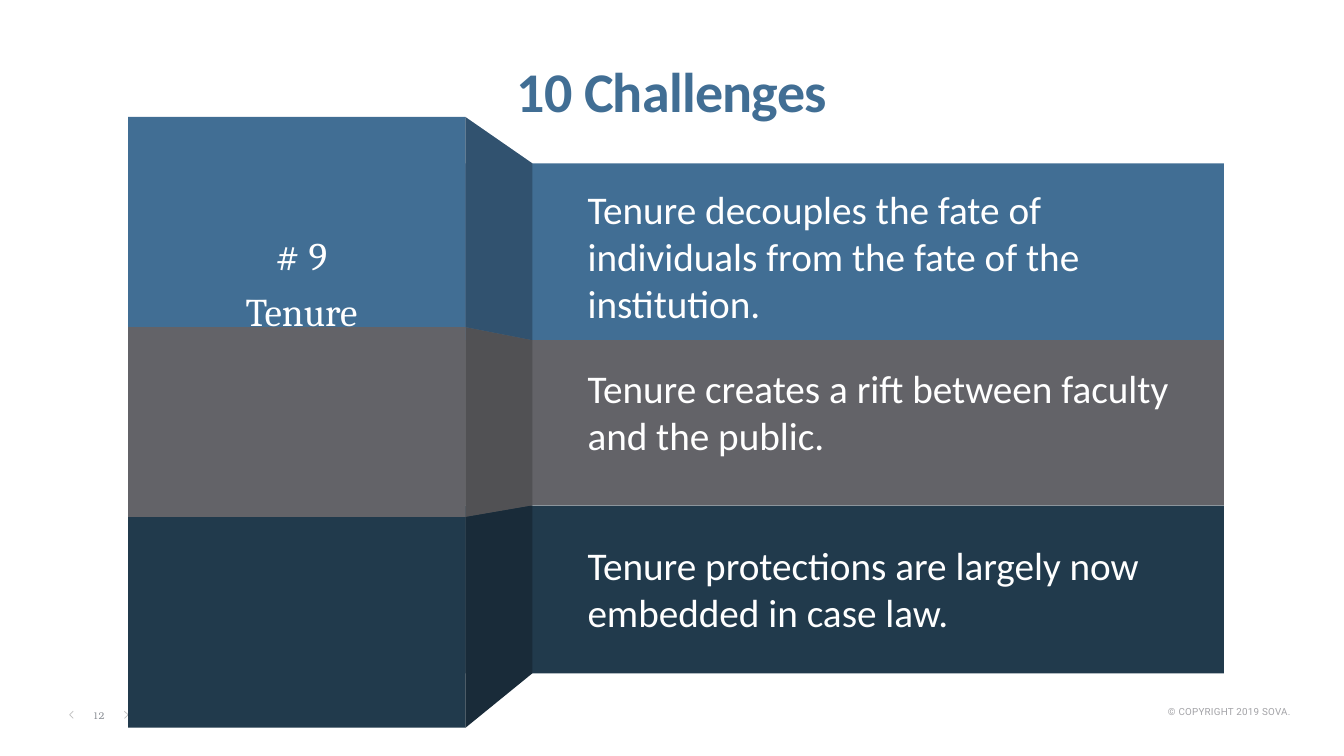
from collections import namedtuple

from pptx import Presentation
from pptx.dml.color import RGBColor
from pptx.enum.shapes import MSO_SHAPE
from pptx.enum.text import MSO_ANCHOR, PP_ALIGN
from pptx.util import Inches, Pt

COLORS = {
    "blue": "416E94", "blue_fold": "31526F",
    "gray": "636368", "gray_fold": "515154",
    "navy": "213A4C", "navy_fold": "192B39",
    "white": "FFFFFF", "copyright": "A3A3A7",
    "page": "8D9197", "chevron": "BFBFBF",
}
WIDTH, HEIGHT = Inches(13.33), Inches(7.5)
COLUMN, ROW = WIDTH / 100, HEIGHT / 100

Box = namedtuple("Box", "left top width height")
Band = namedtuple("Band", "color text text_top text_height")

BANDS = [
    Band("blue", "Tenure decouples the fate of individuals from the fate of the institution.", 8.4, 20.13),
    Band("gray", "Tenure creates a rift between faculty and the public.", 32, 13.87),
    Band("navy", "Tenure protections are largely now embedded in case law.", 55.47, 13.87),
]
OUTER_EDGES = [0, 27.8, 52.93, 80.8]
INNER_EDGES = [6.13, 29.53, 51.4, 73.6]
FOLD_START, FOLD_END = 25.1, 30.08


def color(name):
    return RGBColor.from_string(COLORS[name])


def to_emu(box):
    return (round(box.left * COLUMN), round(box.top * ROW),
            round(box.width * COLUMN), round(box.height * ROW))


def within(box, left, top, width, height):
    return Box(box.left + left, box.top + top, width, height)


def add_text(slide, box, lines, font, size, color_name, align=PP_ALIGN.LEFT,
             anchor=MSO_ANCHOR.MIDDLE, margins=(0.1, 0.05), wrap=True,
             bold=False, line_spacing=None, space_after=None, tracking=None):
    frame = slide.shapes.add_textbox(*to_emu(box)).text_frame
    frame.word_wrap = wrap
    frame.vertical_anchor = anchor
    frame.margin_left = frame.margin_right = Inches(margins[0])
    frame.margin_top = frame.margin_bottom = Inches(margins[1])
    frame.text = "\n".join(lines)
    for paragraph in frame.paragraphs:
        paragraph.alignment = align
        paragraph.line_spacing = line_spacing
        paragraph.space_after = space_after
        for run in paragraph.runs:
            run.font.name = font
            run.font.size = Pt(size)
            run.font.bold = bold
            run.font.color.rgb = color(color_name)
            if tracking is not None:
                run.font._element.set("spc", str(tracking))


def add_rectangle(slide, box, color_name):
    shape = slide.shapes.add_shape(MSO_SHAPE.RECTANGLE, *to_emu(box))
    shape.shadow.inherit = False
    shape.fill.solid()
    shape.fill.fore_color.rgb = color(color_name)
    shape.line.fill.background()


def add_outline(slide, box, points, closed):
    corners = [(round((box.left + x) * COLUMN), round((box.top + y) * ROW))
               for x, y in points]
    builder = slide.shapes.build_freeform(*corners[0])
    builder.add_line_segments(corners[1:], close=closed)
    shape = builder.convert_to_shape()
    shape.shadow.inherit = False
    return shape


def add_footer(slide, box):
    add_text(slide, within(box, 79, 0, 18, 3.33), ["© COPYRIGHT 2019 SOVA."],
             "Roboto", 7, "copyright", PP_ALIGN.RIGHT, margins=(0.13, 0.07), tracking=20)
    add_text(slide, within(box, 5.35, 0.54, 4, 3.2), ["12"],
             "TeX Gyre Bonum", 7, "page", PP_ALIGN.CENTER, margins=(0.13, 0.07))
    for tip, arm in ((9.53, 9.26), (5.18, 5.45)):
        chevron = add_outline(slide, box, [(arm, 1.55), (tip, 2.02), (arm, 2.49)], False)
        chevron.fill.background()
        chevron.line.color.rgb = color("chevron")
        chevron.line.width = Pt(0.5)


def add_title(slide, box):
    add_text(slide, box, ["10 Challenges"], "Calibri", 40, "blue", PP_ALIGN.CENTER,
             margins=(0, 0), bold=True, line_spacing=0.86, tracking=-50)


def add_ribbon(slide, box):
    for index, band in enumerate(BANDS):
        outer_top, outer_bottom = OUTER_EDGES[index:index + 2]
        inner_top, inner_bottom = INNER_EDGES[index:index + 2]
        add_rectangle(slide, within(box, 0, outer_top, FOLD_START,
                                    outer_bottom - outer_top), band.color)
        add_rectangle(slide, within(box, FOLD_START, inner_top, box.width - FOLD_START,
                                    inner_bottom - inner_top), band.color)
    for index, band in enumerate(BANDS):
        fold = add_outline(slide, box, [
            (FOLD_START, OUTER_EDGES[index]), (FOLD_END, INNER_EDGES[index]),
            (FOLD_END, INNER_EDGES[index + 1]), (FOLD_START, OUTER_EDGES[index + 1]),
        ], True)
        fold.fill.solid()
        fold.fill.fore_color.rgb = color(band.color + "_fold")
        fold.line.fill.background()
    add_text(slide, within(box, 1.8, 6.93, 22.2, 30.8), ["# 9", "Tenure"],
             "Cambria", 28, "white", PP_ALIGN.CENTER, margins=(0.1, 0),
             line_spacing=0.9, space_after=Pt(9.8))
    for band in BANDS:
        add_text(slide, within(box, 33.45, band.text_top, 48.16, band.text_height),
                 [band.text], "Calibri", 28, "white", anchor=MSO_ANCHOR.TOP)


def main():
    presentation = Presentation()
    presentation.slide_width, presentation.slide_height = WIDTH, HEIGHT
    slide = presentation.slides.add_slide(presentation.slide_layouts[6])
    add_footer(slide, Box(0, 92.53, 100, 7.47))
    add_title(slide, Box(7.5, 6.67, 85, 11.87))
    add_ribbon(slide, Box(9.53, 15.47, 81.54, 80.8))
    presentation.save("out.pptx")


if __name__ == "__main__":
    main()
